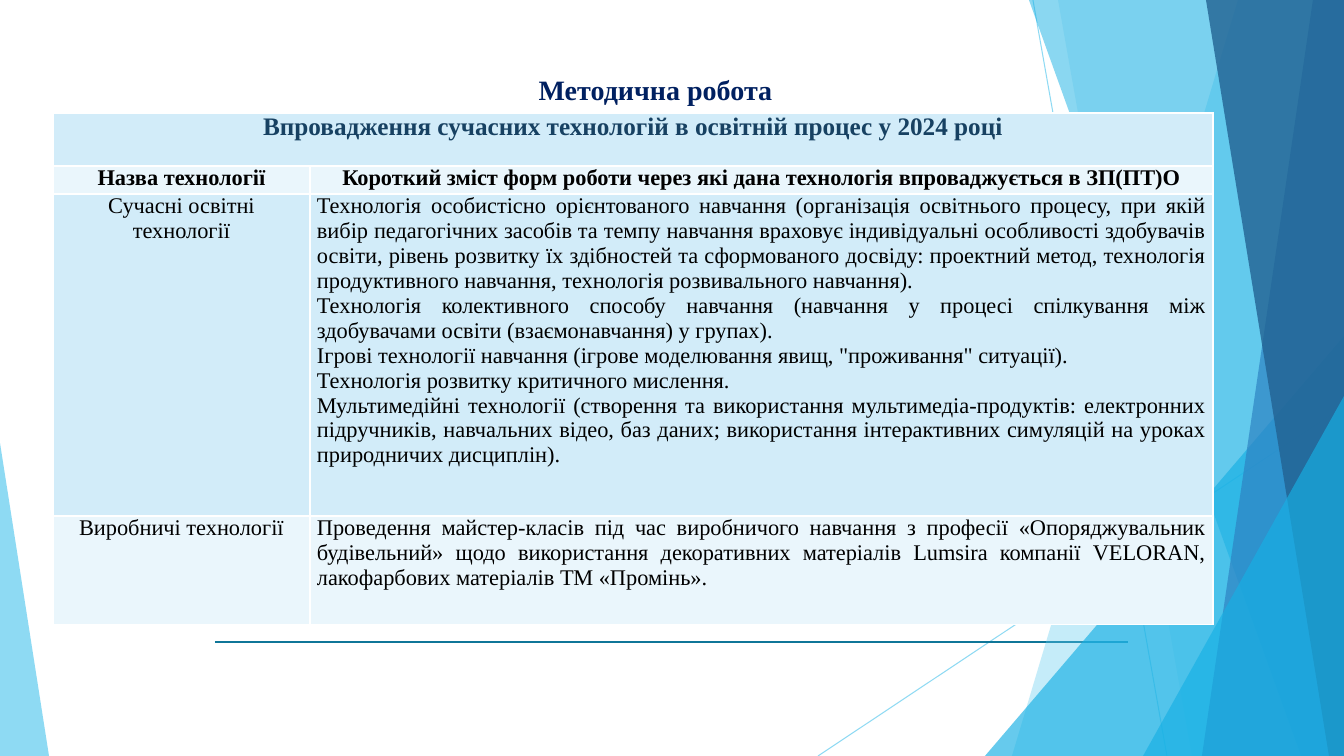
from dataclasses import dataclass

from lxml import etree
from pptx import Presentation
from pptx import util as u
from pptx.dml.color import RGBColor
from pptx.enum import shapes, text
from pptx.oxml.ns import qn


@dataclass(frozen=True)
class Theme:
    font: str = "Times New Roman"
    title_size: int = 20
    heading_size: int = 18
    body_size: int = 16
    title: str = "002060"
    heading: str = "174162"
    body: str = "000000"
    rule: str = "0F7698"
    border: str = "FFFFFF"
    band_dark: str = "D2ECF9"
    band_light: str = "EAF6FC"
    sky: str = "5FCBEF"
    cyan: str = "17B0E4"
    blue: str = "2E83C3"
    navy: str = "226292"


theme = Theme()
PX = u.Inches(1) / 100.8
WIDTH, HEIGHT = 1344, 756


def px(*lengths):
    return [u.Emu(round(length * PX)) for length in lengths]


def paint(fill, color, opacity=100):
    fill.solid()
    fill.fore_color.rgb = RGBColor.from_string(color)
    if opacity < 100:
        solid = fill._xPr.find(qn("a:solidFill"))
        etree.SubElement(solid[0], qn("a:alpha"), val=str(opacity * 1000))


deck = Presentation()
deck.slide_width, deck.slide_height = px(WIDTH, HEIGHT)
page = deck.slides.add_slide(deck.slide_layouts[5])

# Thin lines: start, end, colour, width in points, opacity
for start, end, color, weight, opacity in [
    ((1033, 0), (1167, HEIGHT), theme.sky, 0.75, 70),
    ((WIDTH, 406), (818, HEIGHT), theme.sky, 0.75, 70),
    ((215, 642), (1128, 642), theme.rule, 1.5, 100),
]:
    line = page.shapes.add_connector(shapes.MSO_CONNECTOR.STRAIGHT, *px(*start, *end))
    line.line.width = u.Pt(weight)
    paint(line.line.fill, color, opacity)
    etree.SubElement(line._element.spPr, qn("a:effectLst"))

# Facets: a pair is the left edge (top x, bottom x) of a full-height panel,
# five numbers are a triangle's left, top, width, height and apex
for outline, color, opacity in [
    ((1238, 1012), theme.sky, 36),
    ((1058, 1192), theme.sky, 20),
    ((985, 336, 359, 420, 1), theme.cyan, 66),
    ((1029, 1301), theme.cyan, 50),
    ((1313, 1202), theme.blue, 70),
    ((1206, 1329), theme.navy, 80),
    ((1143, 396, 201, 360, 1), theme.cyan, 66),
    ((0, 443, 49, 313, 0), theme.sky, 70),
]:
    if len(outline) == 2:
        top, bottom = outline
        builder = page.shapes.build_freeform(top, 0, scale=PX)
        builder.add_line_segments([(WIDTH, 0), (WIDTH, HEIGHT), (bottom, HEIGHT)])
        facet = builder.convert_to_shape()
    else:
        *frame, apex = outline
        facet = page.shapes.add_shape(shapes.MSO_SHAPE.ISOSCELES_TRIANGLE, *px(*frame))
        facet.adjustments[0] = apex
    facet.shadow.inherit = False
    facet.line.fill.background()
    paint(facet.fill, color, opacity)

# Title
title = page.shapes.title
title.left, title.top, title.width, title.height = px(151, 67, 1009, 44)
title.text_frame.text = "Методична робота"
title.text_frame.vertical_anchor = text.MSO_ANCHOR.MIDDLE
para = title.text_frame.paragraphs[0]
para.alignment = text.PP_ALIGN.CENTER
para.font.name, para.font.size, para.font.bold = theme.font, u.Pt(theme.title_size), True
para.font.color.rgb = RGBColor.from_string(theme.title)

# Table wording
rows = [
    ("Впровадження сучасних технологій в освітній процес у 2024 році", ""),
    (
        "Назва технології",
        "Короткий зміст форм роботи через які дана технологія впроваджується в ЗП(ПТ)О",
    ),
    (
        "Сучасні освітні технології",
        "Технологія особистісно орієнтованого навчання (організація освітнього процесу, "
        "при якій вибір педагогічних засобів та темпу навчання враховує індивідуальні "
        "особливості здобувачів освіти, рівень розвитку їх здібностей та сформованого "
        "досвіду: проектний метод, технологія продуктивного навчання, технологія "
        "розвивального навчання).\n"
        "Технологія колективного способу навчання (навчання у процесі спілкування між "
        "здобувачами освіти (взаємонавчання) у групах).\n"
        "Ігрові технології навчання (ігрове моделювання явищ, \"проживання\" ситуації).\n"
        "Технологія розвитку критичного мислення.\n"
        "Мультимедійні технології (створення та використання мультимедіа-продуктів: "
        "електронних підручників, навчальних відео, баз даних; використання "
        "інтерактивних симуляцій на уроках природничих дисциплін).",
    ),
    (
        "Виробничі технології",
        "Проведення майстер-класів під час виробничого навчання з професії "
        "«Опоряджувальник будівельний» щодо використання декоративних матеріалів "
        "Lumsira компанії VELORAN, лакофарбових матеріалів ТМ «Промінь».",
    ),
]

# Table grid
column_widths = px(257, 903)
row_heights = px(53, 28, 322, 109)
table = page.shapes.add_table(
    len(rows), 2, *px(53, 113), sum(column_widths), sum(row_heights)
).table
table.first_row = table.horz_banding = False
for column, width in zip(table.columns, column_widths):
    column.width = width
for row, height in zip(table.rows, row_heights):
    row.height = height
table.cell(0, 0).merge(table.cell(0, 1))

# Table cells
for row, wording in enumerate(rows):
    for column, words in enumerate(wording):
        cell = table.cell(row, column)
        cell.margin_left, cell.margin_right = px(7, 7)
        cell.margin_top = cell.margin_bottom = 0
        properties = cell._tc.get_or_add_tcPr()
        for side in ("lnL", "lnR", "lnT", "lnB"):
            edge = etree.SubElement(properties, qn(f"a:{side}"), w=str(u.Pt(1)))
            solid = etree.SubElement(edge, qn("a:solidFill"))
            etree.SubElement(solid, qn("a:srgbClr"), val=theme.border)
        paint(cell.fill, theme.band_light if row % 2 else theme.band_dark)
        if cell.is_spanned:
            continue
        cell.text_frame.text = words
        justified = row > 1 and column == 1
        for para in cell.text_frame.paragraphs:
            para.alignment = text.PP_ALIGN.JUSTIFY if justified else text.PP_ALIGN.CENTER
            para.font.name = theme.font
            para.font.size = u.Pt(theme.body_size if row else theme.heading_size)
            para.font.bold = row < 2
            para.font.color.rgb = RGBColor.from_string(theme.body if row else theme.heading)

deck.save("out.pptx")
